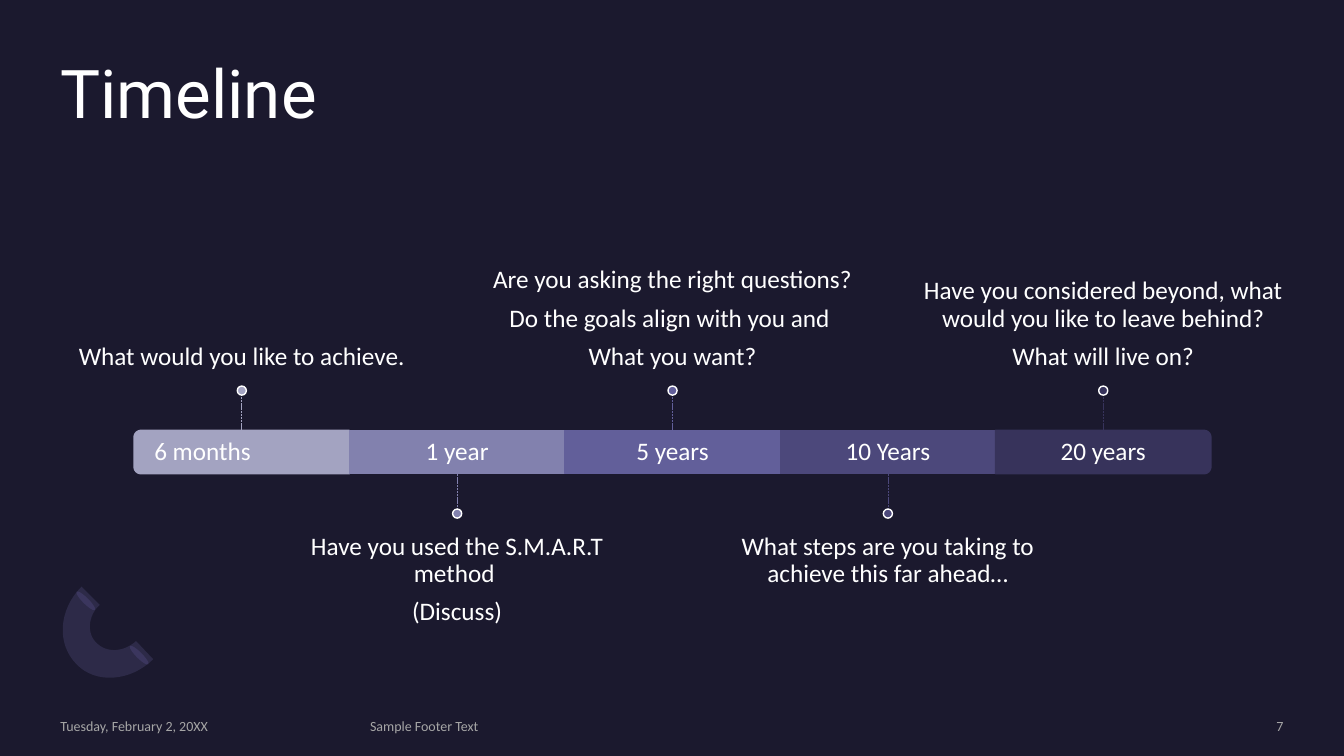
from lxml import etree
from pptx import Presentation
from pptx.dml.color import RGBColor
from pptx.enum import dml, shapes, text
from pptx.oxml import ns
from pptx.util import Inches, Pt

WHITE, GREY = "FFFFFF", "A6A6A6"
LEFT, MID, RIGHT = text.PP_ALIGN.LEFT, text.PP_ALIGN.CENTER, text.PP_ALIGN.RIGHT
TOP, CENTER, BOTTOM = (text.MSO_ANCHOR.TOP, text.MSO_ANCHOR.MIDDLE,
                       text.MSO_ANCHOR.BOTTOM)

STEPS = [
    ("6 months", "A3A3C1", ["What would you like to achieve."]),
    ("1 year", "8281AE", ["Have you used the S.M.A.R.T method ", "(Discuss)"]),
    ("5 years", "625F9A", ["Are you asking the right questions?",
                           "Do the goals align with you and ",
                           "What you want?"]),
    ("10 Years", "4C487B", ["What steps are you taking to achieve this far ahead…"]),
    ("20 years", "37335B", ["Have you considered beyond, what would you like to leave behind?",
                            "What will live on?"]),
]


def color(code):
    return RGBColor.from_string(code)


def paint(shape, fill, line=None, width=1):
    shape.shadow.inherit = False
    shape.fill.solid()
    shape.fill.fore_color.rgb = color(fill)
    if line:
        shape.line.color.rgb = color(line)
        shape.line.width = Pt(width)
    else:
        shape.line.fill.background()


def write(shape, lines, size=18, font="Calibri", ink=WHITE, align=MID,
          anchor=CENTER, insets=(0, 0, 0, 0), spacing=0.9, after=8):
    frame = shape.text_frame
    frame.word_wrap = True
    frame.vertical_anchor = anchor
    (frame.margin_left, frame.margin_top,
     frame.margin_right, frame.margin_bottom) = map(Inches, insets)
    for i, line in enumerate(lines):
        para = frame.add_paragraph() if i else frame.paragraphs[0]
        para.alignment = align
        para.line_spacing = spacing
        para.space_after = Pt(after)
        run = para.add_run()
        run.text = line
        run.font.size = Pt(size)
        run.font.name = font
        run.font.color.rgb = color(ink)


def add_text(slide, box, lines, **style):
    write(slide.shapes.add_textbox(*map(Inches, box)), lines, **style)


def curve(points, count=16):
    """Sample a cubic curve, leaving out its first point."""
    for n in range(1, count + 1):
        t = n / count
        parts = ((1 - t) ** 3, 3 * t * (1 - t) ** 2, 3 * t * t * (1 - t), t ** 3)
        yield tuple(sum(k * p[axis] for k, p in zip(parts, points))
                    for axis in (0, 1))


def outline(slide, path):
    """Draw a closed outline from points and, for curves, triples of points."""
    spots = [path[0]]
    for part in path[1:]:
        if len(part) == 3:
            spots.extend(curve((spots[-1], *part)))
        else:
            spots.append(part)
    spots = [(Inches(x), Inches(y)) for x, y in spots]
    maker = slide.shapes.build_freeform(*spots[0])
    maker.add_line_segments(spots[1:], close=True)
    return maker.convert_to_shape()


def add_arc(slide, x, y):
    """Half-ring ornament with an oval at each open end."""
    for left, top in ((0.75, 0.55), (0.22, 0.01)):
        oval = slide.shapes.add_shape(
            shapes.MSO_SHAPE.OVAL, Inches(x + left), Inches(y + top),
            Inches(0.06), Inches(0.26))
        oval.rotation = 135
        paint(oval, "2C284A")
    path = [(0.16, 0.77), ((-0.04, 0.57), (-0.02, 0.23), (0.21, 0)),
            (0.39, 0.18), ((0.27, 0.29), (0.26, 0.47), (0.36, 0.56)),
            ((0.46, 0.66), (0.63, 0.65), (0.75, 0.54)), (0.92, 0.72),
            ((0.7, 0.94), (0.35, 0.97), (0.16, 0.77))]

    def move(part):
        if len(part) == 3:
            return tuple(move(p) for p in part)
        return x + part[0], y + part[1]

    ring = outline(slide, [move(part) for part in path])
    paint(ring, "7771B2")
    tint = ring.fill._xPr.find(".//" + ns.qn("a:srgbClr"))
    etree.SubElement(tint, ns.qn("a:alpha"), val="20000")


def add_bar(slide, box, first, last):
    x, y, wide, high = box
    if not (first or last):
        return slide.shapes.add_shape(shapes.MSO_SHAPE.RECTANGLE,
                                      *map(Inches, box))
    inner, outer, turn = (x + wide, x, 1) if first else (x, x + wide, -1)
    end = y + high
    near, far = 0.03 * turn, 0.07 * turn
    return outline(slide, [
        (inner, y), (outer + far, y),
        ((outer + near, y), (outer, y + 0.03), (outer, y + 0.07)),
        (outer, end - 0.07),
        ((outer, end - 0.03), (outer + near, end), (outer + far, end)),
        (inner, end)])


def add_stem(slide, x, start, end, code):
    stem = slide.shapes.add_connector(
        shapes.MSO_CONNECTOR.STRAIGHT, *map(Inches, (x, start, x, end)))
    stem.line.color.rgb = color(code)
    stem.line.width = Pt(0.5)
    stem.line.dash_style = dml.MSO_LINE.SQUARE_DOT
    etree.SubElement(stem._element.spPr, ns.qn("a:effectLst"))


def add_steps(slide, x, y, wide, high):
    """Bar of periods with notes above and below in turn."""
    part = wide / len(STEPS)
    note, tall, reach, dot = 3.57, 1.52, 0.35, 0.09
    for i, (name, code, lines) in enumerate(STEPS):
        left = x + i * part
        mid = left + part / 2
        bar = add_bar(slide, (left, y, part, high), i == 0, i == len(STEPS) - 1)
        paint(bar, code, code)
        write(bar, [name], align=MID if i else LEFT,
              insets=(0.15 if i else 0.2, 0, 0.15, 0))
        if i % 2:
            edge = y + high
            tip = edge + reach
            spot, top = tip, tip + dot
            anchor, insets = TOP, (0, 0.15, 0, 0)
        else:
            edge = y
            tip = edge - reach
            spot, top = tip - dot, tip - dot - tall
            anchor, insets = BOTTOM, (0, 0, 0, 0.15)
        add_text(slide, (mid - note / 2, top, note, tall), lines,
                 anchor=anchor, insets=insets)
        add_stem(slide, mid, edge, tip, code)
        mark = slide.shapes.add_shape(
            shapes.MSO_SHAPE.OVAL, *map(Inches, (mid - dot / 2, spot, dot, dot)))
        paint(mark, code, WHITE)


def add_footer(slide, y, high):
    for x, wide, line, align in (
            (0.6, 2.87, "Tuesday, February 2, 20XX", LEFT),
            (3.67, 6.98, "Sample Footer Text", LEFT),
            (10.88, 1.85, "7", RIGHT)):
        add_text(slide, (x, y, wide, high), [line], size=10, ink=GREY,
                 align=align, spacing=1.0, after=0)


def main():
    deck = Presentation()
    deck.slide_width, deck.slide_height = Inches(13.33), Inches(7.5)
    slide = deck.slides.add_slide(deck.slide_layouts[6])
    slide.background.fill.solid()
    slide.background.fill.fore_color.rgb = color("1B192E")
    add_arc(slide, 0.6, 5.82)
    add_text(slide, (0.6, 0.6, 12.13, 1.46), ["Timeline"], size=48,
             font="Roboto", align=LEFT, anchor=TOP, after=0)
    add_steps(slide, 1.33, 4.27, 10.68, 0.43)
    add_footer(slide, 7.12, 0.17)
    deck.save("out.pptx")


if __name__ == "__main__":
    main()
